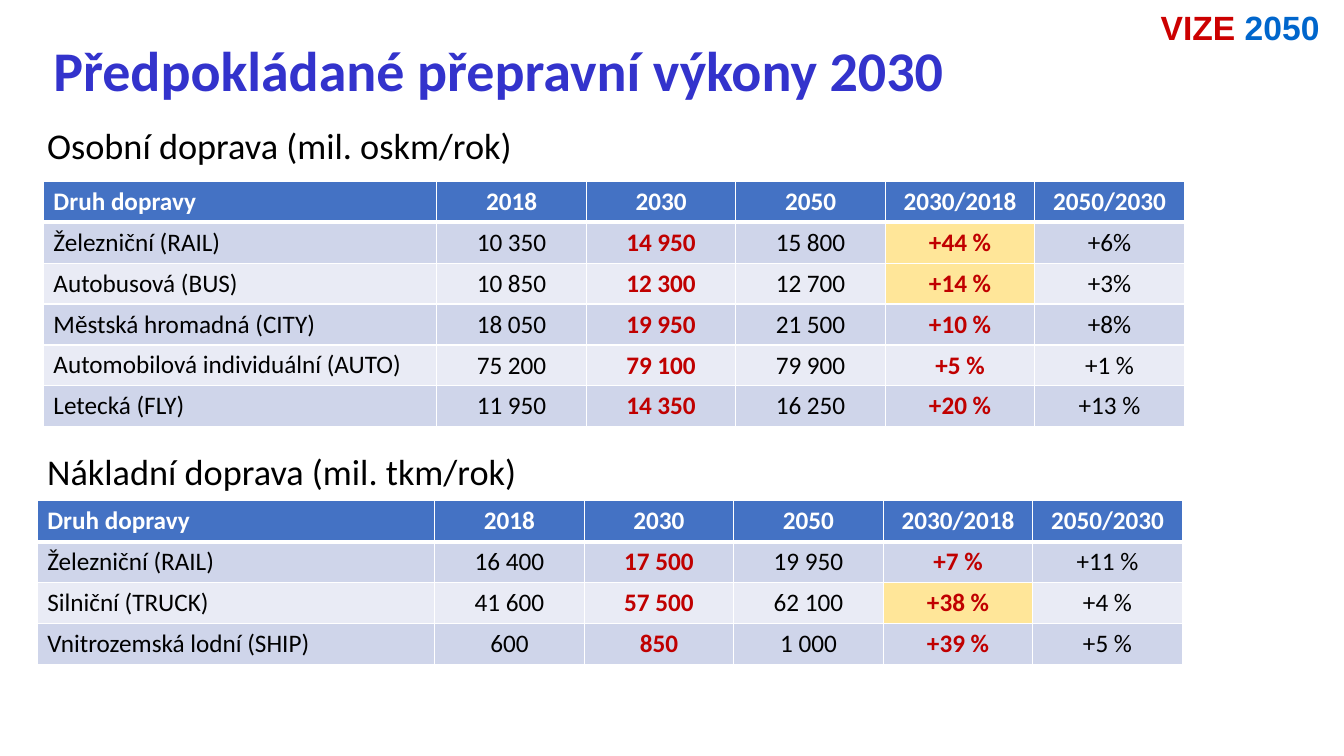
from lxml import etree
from pptx import Presentation
from pptx import util as u
from pptx.dml import color
from pptx.enum import text
from pptx.oxml import ns

COLOURS = {
    "title": "3333CC", "vision": "CC0000", "year": "0066CC", "black": "000000",
    "white": "FFFFFF", "header": "4472C4", "odd": "CFD5EA", "even": "E9EBF5",
    "forecast": "C00000", "highlight": "FFE699",
}
HEADER = ["Druh dopravy", "2018", "2030", "2050", "2030/2018", "2050/2030"]
PASSENGER = [
    ["Železniční (RAIL)", "10 350", "14 950", "15 800", "+44 %", "+6%"],
    ["Autobusová (BUS)", "10 850", "12 300", "12 700", "+14 %", "+3%"],
    ["Městská hromadná (CITY)", "18 050", "19 950", "21 500", "+10 %", "+8%"],
    ["Automobilová individuální (AUTO)", "75 200", "79 100", "79 900", "+5 %", "+1 %"],
    ["Letecká (FLY)", "11 950", "14 350", "16 250", "+20 %", "+13 %"],
]
FREIGHT = [
    ["Železniční (RAIL)", "16 400", "17 500", "19 950", "+7 %", "+11 %"],
    ["Silniční (TRUCK)", "41 600", "57 500", "62 100", "+38 %", "+4 %"],
    ["Vnitrozemská lodní (SHIP)", "600", "850", "1 000", "+39 %", "+5 %"],
]
FORECAST_COLUMNS = (2, 4)
GROWTH_COLUMN = 4
FIGURE_WIDTH = 106.8
ROW_HEIGHT = 29.2
SECTION = {"line_spacing": 0.8, "space_before": u.Pt(10), "space_after": u.Pt(12)}
VISION = {"line_spacing": 0.9, "space_before": u.Pt(10), "alignment": text.PP_ALIGN.RIGHT}


def apply(target, values):
    """Set each named attribute on the target."""
    for name, value in values.items():
        setattr(target, name, value)


def rgb(name):
    """Return the named colour."""
    return color.RGBColor.from_string(COLOURS[name])


def add_run(paragraph, wording, colour, size, bold=False, face="Calibri"):
    """Append formatted wording to a paragraph."""
    run = paragraph.add_run()
    run.text = wording
    apply(run.font, {"name": face, "size": u.Pt(size), "bold": bold})
    run.font.color.rgb = rgb(colour)


def add_label(slide, place, layout):
    """Add a text box and return its laid-out paragraph."""
    frame = slide.shapes.add_textbox(*map(u.Pt, place)).text_frame
    frame.word_wrap = True
    apply(frame.paragraphs[0], layout)
    return frame.paragraphs[0]


def add_borders(cell, bottom, top):
    """Draw white lines round a cell."""
    properties = cell._tc.get_or_add_tcPr()
    for side, width in {"L": 1, "R": 1, "T": top, "B": bottom}.items():
        line = etree.SubElement(properties, ns.qn(f"a:ln{side}"), w=str(u.Pt(width)))
        fill = etree.SubElement(line, ns.qn("a:solidFill"))
        etree.SubElement(fill, ns.qn("a:srgbClr"), val=COLOURS["white"])


def fill_cell(cell, wording, row, column, highlighted):
    """Write and colour one cell according to its row and column."""
    heading = row == 0
    forecast = column in FORECAST_COLUMNS
    add_borders(cell, 3 if heading else 1, 3 if row == 1 else 1)
    band = "header" if heading else "odd" if row % 2 else "even"
    if column == GROWTH_COLUMN and row in highlighted:
        band = "highlight"
    cell.fill.solid()
    cell.fill.fore_color.rgb = rgb(band)
    paragraph = cell.text_frame.paragraphs[0]
    if column:
        cell.vertical_anchor = text.MSO_ANCHOR.MIDDLE
        paragraph.alignment = text.PP_ALIGN.CENTER
    ink = "white" if heading else "forecast" if forecast else "black"
    add_run(paragraph, wording, ink, 18, heading or forecast)


def add_transport_table(slide, left, top, mode_width, modes, highlighted):
    """Add a table of transport volumes by mode."""
    rows = [HEADER, *modes]
    widths = [mode_width] + [FIGURE_WIDTH] * (len(HEADER) - 1)
    place = (left, top, sum(widths), ROW_HEIGHT * len(rows))
    table = slide.shapes.add_table(len(rows), len(HEADER), *map(u.Pt, place)).table
    for column, width in zip(table.columns, widths):
        column.width = u.Pt(width)
    for r, values in enumerate(rows):
        table.rows[r].height = u.Pt(ROW_HEIGHT)
        for c, wording in enumerate(values):
            fill_cell(table.cell(r, c), wording, r, c, highlighted)


def main():
    """Build and save the slide."""
    deck = Presentation()
    apply(deck, {"slide_width": u.Pt(960), "slide_height": u.Pt(540)})
    slide = deck.slides.add_slide(deck.slide_layouts[6])

    vision = add_label(slide, (813.6, 5, 136, 34), VISION)
    add_run(vision, "VIZE ", "vision", 24, True, "Arial")
    add_run(vision, "2050", "year", 24, True, "Arial")
    title = add_label(slide, (31, 21.6, 735, 55.4), {})
    add_run(title, "Předpokládané přepravní výkony 2030", "title", 40, True)

    for wording, top in (("Osobní doprava (mil. oskm/rok)", 90.7),
                         ("Nákladní doprava (mil. tkm/rok)", 323.3)):
        section = add_label(slide, (26.6, top, 907, 34), SECTION)
        add_run(section, wording, "black", 25.9)

    add_transport_table(slide, 31, 129.6, 281, PASSENGER, (1, 2))
    add_transport_table(slide, 26.6, 357.8, 284, FREIGHT, (2,))
    deck.save("out.pptx")


if __name__ == "__main__":
    main()
